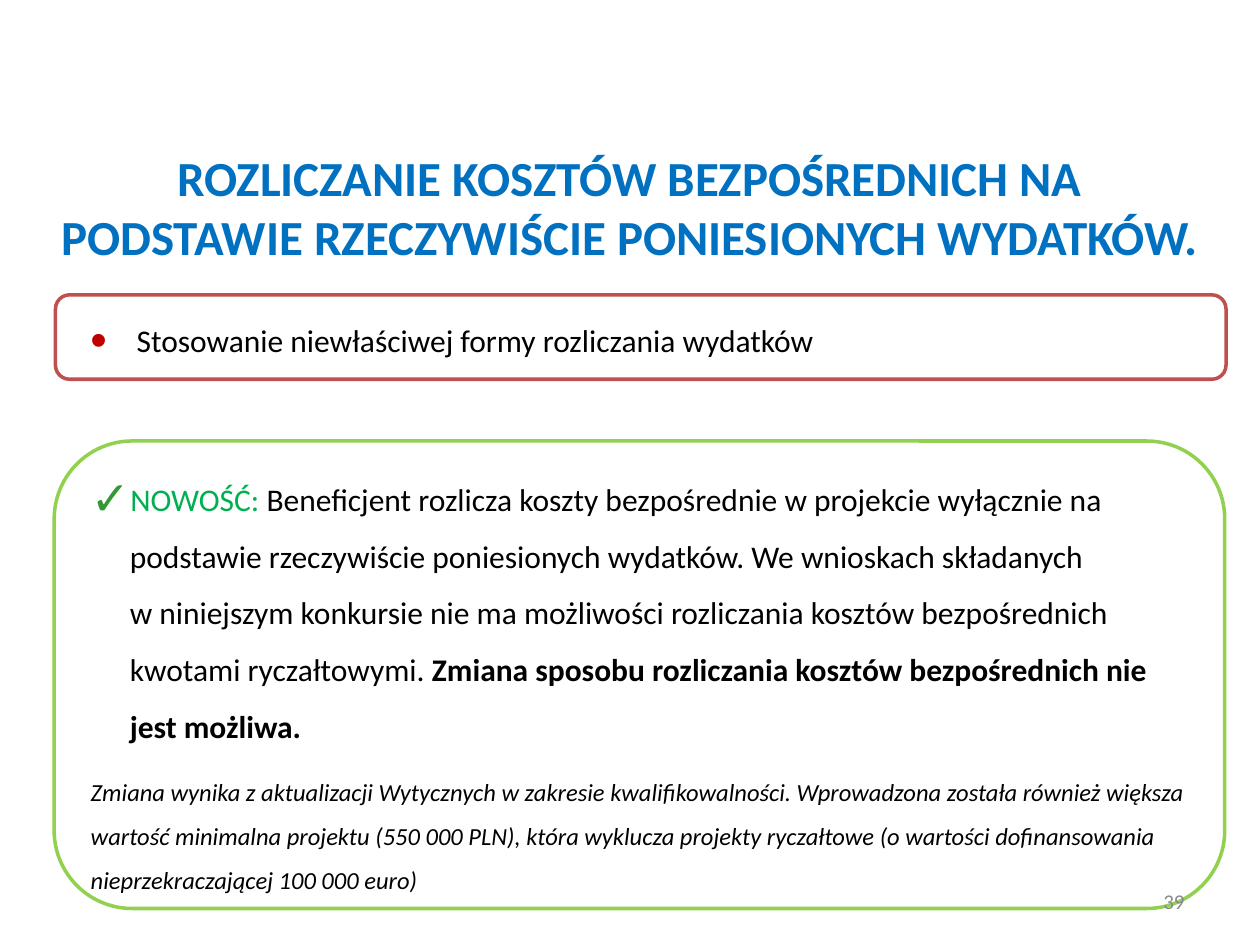
"""Build the slide on settling direct costs."""
from dataclasses import dataclass

from lxml import etree
from pptx import Presentation
from pptx.dml.color import RGBColor
from pptx.enum.shapes import MSO_SHAPE
from pptx.enum.text import MSO_ANCHOR, MSO_AUTO_SIZE, PP_ALIGN
from pptx.oxml.ns import qn
from pptx.util import Inches, Pt

ROUND = MSO_SHAPE.ROUNDED_RECTANGLE
MIDDLE, TOP = MSO_ANCHOR.MIDDLE, MSO_ANCHOR.TOP
CENTER, LEFT, RIGHT = PP_ALIGN.CENTER, PP_ALIGN.LEFT, PP_ALIGN.RIGHT
FIXED = MSO_AUTO_SIZE.NONE

BLUE = RGBColor(0x00, 0x70, 0xC0)
BRICK = RGBColor(0xC0, 0x50, 0x4D)
RED = RGBColor(0xC0, 0x00, 0x00)
LIME = RGBColor(0x92, 0xD0, 0x50)
GREEN = RGBColor(0x00, 0xB0, 0x50)
LEAF = RGBColor(0x33, 0x99, 0x33)
GRAY = RGBColor(0x89, 0x89, 0x89)
BLACK = RGBColor(0x00, 0x00, 0x00)

FONT = "Calibri"
WIDE, HIGH = Inches(10), Inches(7.5)
HANG = Inches(0.31)


@dataclass(frozen=True)
class Box:
    """A place on the slide, in percent of its width and height."""
    left: float
    top: float
    width: float
    height: float

    def spot(self) -> tuple:
        """Return left, top, width and height as lengths."""
        return (int(WIDE * self.left / 100), int(HIGH * self.top / 100),
                int(WIDE * self.width / 100), int(HIGH * self.height / 100))


@dataclass(frozen=True)
class Span:
    """A piece of text in one style."""
    text: str
    size: int
    color: RGBColor = BLACK
    bold: bool = False
    slant: bool = False


@dataclass(frozen=True)
class Frame:
    """A rounded outline."""
    box: Box
    color: RGBColor


FRAMES = (
    Frame(Box(4.4, 31.2, 92.9, 8.93), BRICK),
    Frame(Box(4.3, 46.67, 92.9, 49.47), LIME),
)
HEAD = Box(3.5, 14.27, 92.9, 15.2)
RULES = Box(6.2, 42.67, 89.1, 57.2)
ERROR = Box(6.2, 33.33, 87.6, 5.33)
PAGE = Box(71.7, 92.67, 23.3, 5.33)

TITLE = Span("ROZLICZANIE KOSZTÓW BEZPOŚREDNICH NA PODSTAWIE RZECZYWIŚCIE "
             "PONIESIONYCH WYDATKÓW.", 28, BLUE, True)
FAULT = Span(" Stosowanie niewłaściwej formy rozliczania wydatków", 18)
NEWS = (
    Span("NOWOŚĆ: ", 18, GREEN),
    Span("Beneficjent rozlicza koszty bezpośrednie w projekcie wyłącznie na "
         "podstawie rzeczywiście poniesionych wydatków. We wnioskach "
         "składanych \nw niniejszym konkursie nie ma możliwości rozliczania "
         "kosztów bezpośrednich kwotami ryczałtowymi. ", 18),
    Span("Zmiana sposobu rozliczania kosztów bezpośrednich nie jest możliwa.",
         18, bold=True),
)
NOTE = Span("Zmiana wynika z aktualizacji Wytycznych w zakresie "
            "kwalifikowalności. Wprowadzona została również większa wartość "
            "minimalna projektu (550 000 PLN), która wyklucza projekty "
            "ryczałtowe (o wartości dofinansowania nieprzekraczającej "
            "100 000 euro)", 14, slant=True)


def place(shape, box: Box) -> None:
    """Move a shape to its box."""
    shape.left, shape.top, shape.width, shape.height = box.spot()


def setup(shape, anchor=TOP):
    """Make a shape's text wrap at a fixed size and return its frame."""
    frame = shape.text_frame
    frame.word_wrap = True
    frame.auto_size = FIXED
    frame.vertical_anchor = anchor
    return frame


def write(para, *spans: Span, align=LEFT) -> None:
    """Add styled spans to a paragraph."""
    para.alignment = align
    for span in spans:
        for row, text in enumerate(span.text.split("\n")):
            if row:
                para.add_line_break()
            run = para.add_run()
            run.text = text
            font = run.font
            font.name, font.size = FONT, Pt(span.size)
            font.bold, font.italic = span.bold, span.slant
            font.color.rgb = span.color


def bullet(para, mark: str, color: RGBColor) -> None:
    """Give a paragraph a large hanging bullet."""
    props = para._p.get_or_add_pPr()
    props.set("marL", str(HANG))
    props.set("indent", str(-HANG))
    tint = etree.SubElement(props, qn("a:buClr"))
    etree.SubElement(tint, qn("a:srgbClr"), val=str(color))
    etree.SubElement(props, qn("a:buSzPct"), val="150000")
    etree.SubElement(props, qn("a:buFont"), typeface="Arial")
    etree.SubElement(props, qn("a:buChar"), char=mark)


def plain(para) -> None:
    """Strip the bullet and indent from a paragraph."""
    props = para._p.get_or_add_pPr()
    props.set("marL", "0")
    props.set("indent", "0")
    etree.SubElement(props, qn("a:buNone"))


def outline(slide, item: Frame) -> None:
    """Draw a rounded outline."""
    shape = slide.shapes.add_shape(ROUND, *item.box.spot())
    shape.shadow.inherit = False
    shape.fill.background()
    shape.line.color.rgb = item.color
    shape.line.width = Pt(2)


def label(slide, box: Box, anchor=TOP):
    """Add a text box and return its first paragraph."""
    shape = slide.shapes.add_textbox(*box.spot())
    return setup(shape, anchor).paragraphs[0]


def rules(body) -> None:
    """Fill the body with the new rule and its note."""
    place(body, RULES)
    frame = setup(body)
    frame.margin_top = Inches(0.46)
    news, note = frame.paragraphs[0], frame.add_paragraph()
    bullet(news, "✓", LEAF)
    plain(note)
    for para, gap in ((news, 0), (note, 10)):
        para.line_spacing = 1.5
        para.space_before = Pt(gap)
    write(news, *NEWS)
    write(note, NOTE)


def main() -> None:
    """Build and save the slide."""
    deck = Presentation()
    deck.slide_width, deck.slide_height = WIDE, HIGH
    slide = deck.slides.add_slide(deck.slide_layouts[1])
    title, body = slide.placeholders
    place(title, HEAD)
    write(setup(title, MIDDLE).paragraphs[0], TITLE, align=CENTER)
    rules(body)
    for item in FRAMES:
        outline(slide, item)
    fault = label(slide, ERROR)
    bullet(fault, "•", RED)
    write(fault, FAULT)
    write(label(slide, PAGE, MIDDLE), Span("39", 12, GRAY), align=RIGHT)
    deck.save("out.pptx")


if __name__ == "__main__":
    main()
